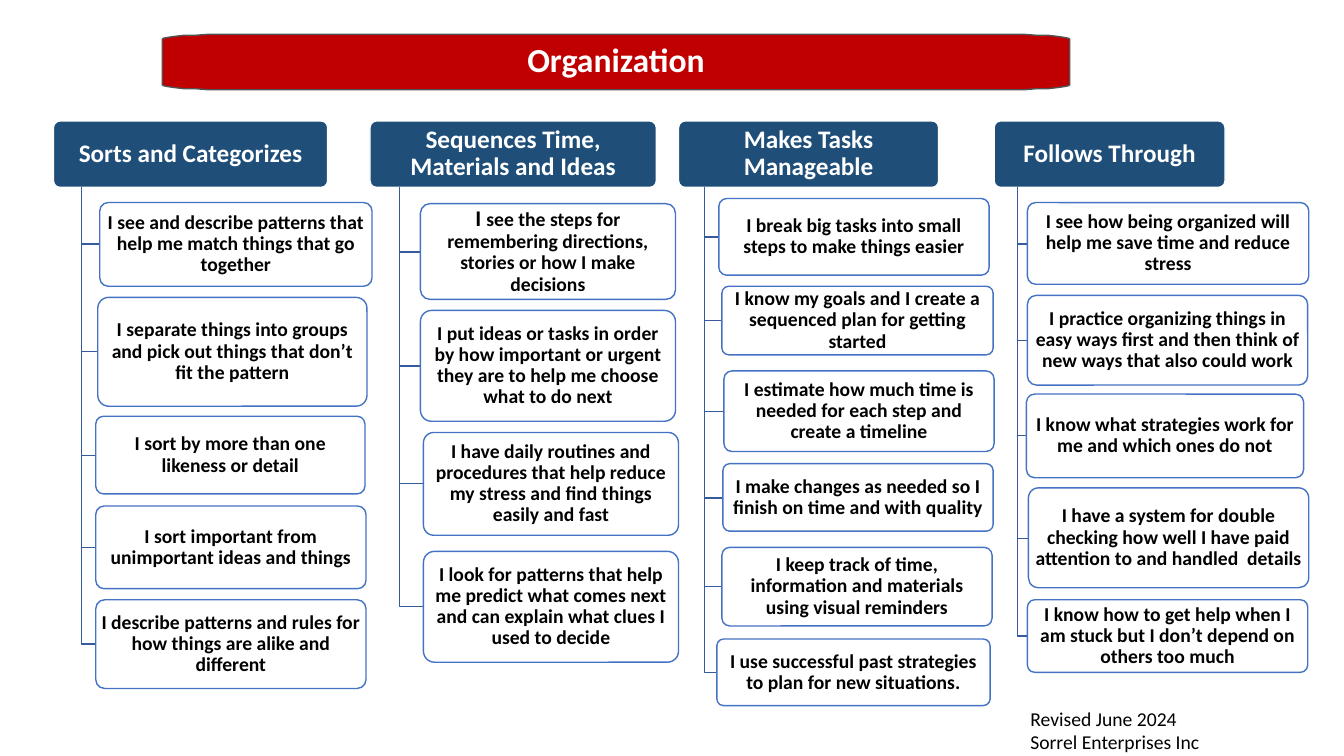
from dataclasses import dataclass
from math import cos, pi, sin

from pptx import Presentation
from pptx.dml.color import RGBColor
from pptx.enum.shapes import MSO_SHAPE
from pptx.enum.text import MSO_ANCHOR, MSO_AUTO_SIZE, PP_ALIGN
from pptx.util import Emu, Pt

ROUNDED = MSO_SHAPE.ROUNDED_RECTANGLE
MIDDLE, TOP = MSO_ANCHOR.MIDDLE, MSO_ANCHOR.TOP
CENTER, LEFT = PP_ALIGN.CENTER, PP_ALIGN.LEFT
PX = 9144  # 100 px to the inch

TITLE = "Organization"
FOOTER = ["Revised June 2024", "Sorrel Enterprises Inc"]

# Header: text, left, width, trunk x. Goals: text, left, top, width, height.
COLUMNS = [
    (("Sorts and Categorizes", 53, 272, 81), [
        ("I see and describe patterns that help me match things that go together",
         99, 201, 270, 83),
        ("I separate things into groups and pick out things that don’t fit the pattern",
         97, 295, 267, 108),
        ("I sort by more than one likeness or detail", 95, 413, 267, 77),
        ("I sort important from unimportant ideas and things", 95, 502, 268, 82),
        ("I describe patterns and rules for how things are alike and different",
         95, 595, 268, 88),
    ]),
    (("Sequences Time, Materials and Ideas", 367, 284, 396), [
        ([("I ", 16), ("see the steps for remembering directions, stories "
                       "or how I make decisions", 14)], 417, 202, 253, 95),
        ("I put ideas or tasks in order by how important or urgent they are "
         "to help me choose what to do next", 417, 308, 253, 110),
        ("I have daily routines and procedures that help reduce my stress "
         "and find things easily and fast", 420, 429, 253, 102),
        ("I look for patterns that help me predict what comes next and can "
         "explain what clues I used to decide", 420, 547, 253, 110),
    ]),
    (("Makes Tasks Manageable", 673, 258, 699), [
        ("I break big tasks into small steps to make things easier",
         713, 197, 268, 76),
        ("I know my goals and I create a sequenced plan for getting started",
         716, 284, 269, 68),
        ("I estimate how much time is needed for each step and create a timeline",
         718, 368, 268, 80),
        ("I make changes as needed so I finish on time and with quality",
         717, 460, 268, 67),
        ("I keep track of time, information and materials using visual reminders",
         716, 543, 268, 78),
        ("I use successful past strategies to plan for new situations.",
         711, 634, 271, 66),
    ]),
    (("Follows Through", 986, 229, 1009), [
        ("I see how being organized will help me save time and reduce stress",
         1019, 201, 279, 81),
        ("I practice organizing things in easy ways first and then think of "
         "new ways that also could work", 1019, 293, 278, 89),
        ("I know what strategies work for me and which ones do not",
         1018, 391, 275, 83),
        ("I have a system for double checking how well I have paid attention "
         "to and handled  details", 1020, 484, 278, 99),
        ("I know how to get help when I am stuck but I don’t depend on "
         "others too much", 1019, 595, 278, 72),
    ]),
]
HEADER_TOP, HEADER_HEIGHT = 120, 66
BAND = (161, 34, 900, 55)
BAND_CORNER = (75, 5)


@dataclass(frozen=True)
class Theme:
    font: str = "Calibri"
    white: str = "FFFFFF"
    black: str = "000000"
    header: str = "1F4E79"
    goal_line: str = "4472C4"
    elbow: str = "365B9D"
    band: str = "C00000"
    band_line: str = "525252"
    title_size: int = 24
    header_size: int = 18
    body_size: int = 14


THEME = Theme()


def px(*lengths):
    return [Emu(round(length * PX)) for length in lengths]


def paint(shape, fill, line):
    shape.shadow.inherit = False
    if fill:
        shape.fill.solid()
        shape.fill.fore_color.rgb = RGBColor.from_string(fill)
    else:
        shape.fill.background()
    shape.line.color.rgb = RGBColor.from_string(line)
    shape.line.width = Pt(1)


def write(shape, paragraphs, size=THEME.body_size, color=THEME.black, bold=True,
          align=CENTER, anchor=MIDDLE, insets=(3, 2), spacing=0.9, wrap=True):
    """Fill a shape with paragraphs, each a string or a list of (text, size) runs."""
    frame = shape.text_frame
    frame.auto_size = MSO_AUTO_SIZE.NONE
    frame.word_wrap = wrap
    frame.vertical_anchor = anchor
    frame.margin_left, frame.margin_top = px(*insets)
    frame.margin_right, frame.margin_bottom = px(*insets)
    for i, content in enumerate(paragraphs):
        paragraph = frame.add_paragraph() if i else frame.paragraphs[0]
        paragraph.alignment, paragraph.line_spacing = align, spacing
        runs = [(content, size)] if isinstance(content, str) else content
        for text, points in runs:
            run = paragraph.add_run()
            run.text = text
            run.font.name, run.font.size, run.font.bold = THEME.font, Pt(points), bold
            run.font.color.rgb = RGBColor.from_string(color)


def add_box(slide, text, place, fill, line, **text_format):
    box = slide.shapes.add_shape(ROUNDED, *px(*place))
    box.adjustments[0] = 0.1
    paint(box, fill, line)
    write(box, [text], **text_format)


def add_outline(slide, points, fill, line, close):
    builder = slide.shapes.build_freeform(*points[0], scale=PX)
    builder.add_line_segments(points[1:], close=close)
    paint(builder.convert_to_shape(), fill, line)


def band_points(steps=8):
    """Outline of the title band, whose corners are quarter ellipses."""
    left, top, width, height = BAND
    rx, ry = BAND_CORNER
    right, bottom = left + width - rx, top + height - ry
    centers = [(right, bottom), (left + rx, bottom), (left + rx, top + ry),
               (right, top + ry)]
    return [(x + rx * cos(angle), y + ry * sin(angle))
            for quarter, (x, y) in enumerate(centers)
            for angle in ((quarter + step / steps) * pi / 2
                          for step in range(steps + 1))]


def add_column(slide, header, goals):
    heading, left, width, trunk = header
    add_box(slide, heading, (left, HEADER_TOP, width, HEADER_HEIGHT),
            THEME.header, THEME.white, size=THEME.header_size,
            color=THEME.white, insets=(4, 3))
    for goal, x, y, goal_width, height in goals:
        middle = y + height / 2
        add_outline(slide, [(trunk, HEADER_TOP + HEADER_HEIGHT), (trunk, middle),
                            (x, middle)], None, THEME.elbow, close=False)
        add_box(slide, goal, (x, y, goal_width, height), THEME.white, THEME.goal_line)


def main():
    deck = Presentation()
    deck.slide_width, deck.slide_height = px(1333, 750)
    slide = deck.slides.add_slide(deck.slide_layouts[5])
    for header, goals in COLUMNS:
        add_column(slide, header, goals)

    add_outline(slide, band_points(), THEME.band, THEME.band_line, close=True)
    title = slide.shapes.title
    title.left, title.top, title.width, title.height = px(*BAND)
    write(title, [TITLE], size=THEME.title_size, color=THEME.white, insets=(5, 5))
    slide.shapes._spTree.append(title._element)  # in front of the band

    footer = slide.shapes.add_textbox(*px(1012, 696, 192, 57))
    write(footer, FOOTER, bold=False, align=LEFT, anchor=TOP, insets=(10, 5),
          spacing=1.0, wrap=False)
    deck.save("out.pptx")


if __name__ == "__main__":
    main()
